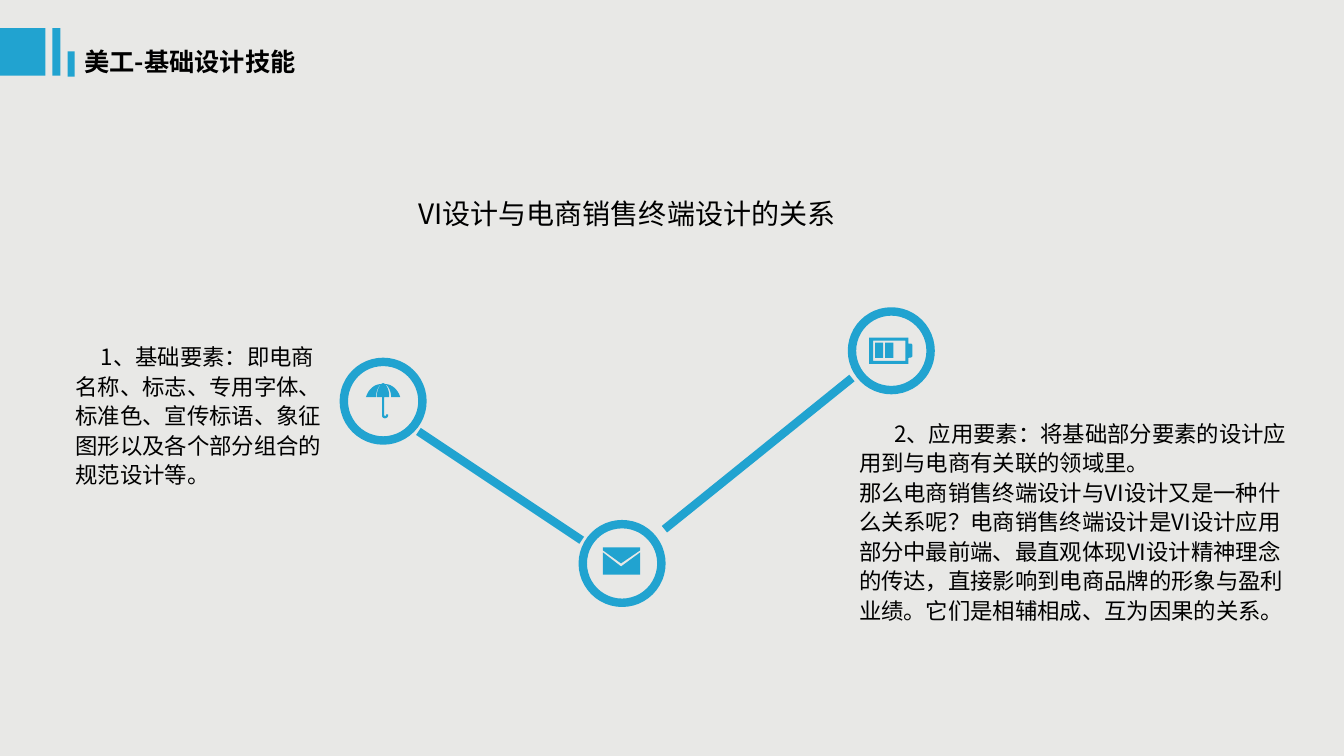
from dataclasses import dataclass

from lxml.etree import SubElement
from pptx import Presentation
from pptx.dml.color import RGBColor
from pptx.enum.shapes import MSO_CONNECTOR as Connector, MSO_SHAPE as Preset
from pptx.enum.text import MSO_AUTO_SIZE as AutoSize
from pptx.oxml.ns import qn
from pptx.util import Inches, Pt


@dataclass(frozen=True)
class Theme:
    font: str = "Noto Sans CJK SC"
    accent: RGBColor = RGBColor(0x21, 0xA3, 0xD0)
    ink: RGBColor = RGBColor(0, 0, 0)
    backdrop: RGBColor = RGBColor(0xE8, 0xE8, 0xE6)
    heading: int = 18
    subject: int = 20
    body: int = 16
    stroke: int = 6


def trace(segments, steps=8):
    points = [segments[0]]
    for segment in segments[1:]:
        if len(segment) == 2:
            points.append(segment)
            continue
        knots = (points[-1], *segment)
        for step in range(1, steps + 1):
            t = step / steps
            weights = ((1 - t) ** 3, 3 * t * (1 - t) ** 2, 3 * t * t * (1 - t), t ** 3)
            points.append(tuple(sum(w * knot[axis] for w, knot in zip(weights, knots))
                                for axis in (0, 1)))
    return [(Inches(x), Inches(y)) for x, y in points]


class SlideMaker:
    def __init__(self, page, theme):
        self.page = page
        self.theme = theme
        fill = page.background.fill
        fill.solid()
        fill.fore_color.rgb = theme.backdrop

    def paint(self, shape):
        shape.shadow.inherit = False
        shape.fill.solid()
        shape.fill.fore_color.rgb = self.theme.accent
        shape.line.fill.background()

    def stroke(self, line):
        line.color.rgb = self.theme.accent
        line.width = Pt(self.theme.stroke)

    def block(self, left, top, width, height):
        self.paint(self.page.shapes.add_shape(
            Preset.RECTANGLE, Inches(left), Inches(top), Inches(width), Inches(height)))

    def ring(self, left, top, size=0.78):
        ring = self.page.shapes.add_shape(
            Preset.OVAL, Inches(left), Inches(top), Inches(size), Inches(size))
        ring.shadow.inherit = False
        ring.fill.background()
        self.stroke(ring.line)

    def link(self, start, end):
        link = self.page.shapes.add_connector(
            Connector.STRAIGHT, *map(Inches, (*start, *end)))
        self.stroke(link.line)
        SubElement(link._element.spPr, qn("a:effectLst"))

    def outline(self, *contours):
        first, *others = [trace(contour) for contour in contours]
        builder = self.page.shapes.build_freeform(*first[0])
        builder.add_line_segments(first[1:])
        for contour in others:
            builder.move_to(*contour[0])
            builder.add_line_segments(contour[1:])
        self.paint(builder.convert_to_shape())

    def text(self, frame, paragraphs, size, bold=False, indent=0.0,
             spacing=1.0, insets=(0.1, 0.05)):
        box = self.page.shapes.add_textbox(*map(Inches, frame)).text_frame
        box.word_wrap = True
        box.auto_size = AutoSize.SHAPE_TO_FIT_TEXT
        box.margin_left = box.margin_right = Inches(insets[0])
        box.margin_top = box.margin_bottom = Inches(insets[1])
        box.text = "\n".join(paragraphs)
        for para in box.paragraphs:
            para.line_spacing = spacing
            font = para.font
            font.name = self.theme.font
            font.size = Pt(size)
            font.bold = bold
            font.color.rgb = self.theme.ink
            defaults = para._p.pPr.find(qn("a:defRPr"))
            SubElement(defaults, qn("a:ea")).set("typeface", self.theme.font)
        if indent:
            box.paragraphs[0]._p.pPr.set("indent", str(Inches(indent)))


UMBRELLA = (
    (3.88, 3.94), (3.97, 3.94),
    ((3.95, 3.87), (3.89, 3.81), (3.82, 3.81)), (3.8, 3.8), (3.78, 3.81),
    ((3.71, 3.81), (3.65, 3.87), (3.63, 3.94)), (3.73, 3.94),
    ((3.73, 3.86), (3.77, 3.81), (3.78, 3.81)),
    ((3.73, 3.87), (3.74, 3.94), (3.74, 3.94)), (3.79, 3.94), (3.79, 4.12),
    ((3.79, 4.14), (3.8, 4.15), (3.82, 4.15)),
    ((3.83, 4.15), (3.85, 4.14), (3.85, 4.12)),
    (3.85, 4.11), (3.83, 4.11), (3.83, 4.12), (3.82, 4.13), (3.81, 4.12),
    (3.81, 3.94), (3.86, 3.94),
    ((3.86, 3.94), (3.87, 3.87), (3.82, 3.81)),
    ((3.83, 3.81), (3.88, 3.86), (3.88, 3.94)),
)
ENVELOPE_BODY = ((5.98, 5.48), (5.98, 5.7), (6.35, 5.7), (6.35, 5.48), (6.16, 5.62))
ENVELOPE_FLAP = ((6.35, 5.46), (6.35, 5.43), (5.98, 5.43), (5.98, 5.46), (6.16, 5.59))
BATTERY_CASE = (
    (9.01, 3.41), (9.01, 3.35), (8.62, 3.35), (8.62, 3.61), (9.01, 3.61), (9.01, 3.55),
    ((9.02, 3.55), (9.05, 3.55), (9.05, 3.53)), (9.05, 3.43),
    ((9.05, 3.4), (9.02, 3.41), (9.01, 3.41)),
)
BATTERY_WINDOW = ((8.98, 3.58), (8.66, 3.58), (8.66, 3.38), (8.98, 3.38), (8.98, 3.58))

BASICS = ("1、基础要素：即电商名称、标志、专用字体、标准色、宣传标语、象征图形以及各个部分组合的规范设计等。",)
APPLICATIONS = (
    "2、应用要素：将基础部分要素的设计应用到与电商有关联的领域里。",
    "那么电商销售终端设计与VI设计又是一种什么关系呢？电商销售终端设计是VI设计应用部分中最前端、"
    "最直观体现VI设计精神理念的传达，直接影响到电商品牌的形象与盈利业绩。"
    "它们是相辅相成、互为因果的关系。",
)


def main():
    deck = Presentation()
    deck.slide_width, deck.slide_height = Inches(13.33), Inches(7.5)
    theme = Theme()
    maker = SlideMaker(deck.slides.add_slide(deck.slide_layouts[6]), theme)

    for left, top in ((3.41, 3.59), (5.78, 5.2), (8.45, 3.09)):
        maker.ring(left, top)
    maker.link((4.15, 4.28), (5.77, 5.36))
    maker.link((6.59, 5.25), (8.45, 3.75))

    body = dict(size=theme.body, spacing=1.1, insets=(0.07, 0.03))
    maker.text((0.68, 3.35, 2.66, 1.55), BASICS, indent=0.25, **body)
    maker.text((8.45, 4.11, 4.44, 2.14), APPLICATIONS, indent=0.35, **body)

    maker.outline(ENVELOPE_BODY)
    maker.outline(ENVELOPE_FLAP)
    maker.outline(UMBRELLA)
    maker.outline(BATTERY_CASE, BATTERY_WINDOW)
    for left in (8.68, 8.78):
        maker.block(left, 3.4, 0.08, 0.15)

    maker.text((4.05, 1.9, 4.5, 0.44), ("VI设计与电商销售终端设计的关系",), theme.subject)
    for bar in ((0, 0.28, 0.45, 0.47), (0.52, 0.28, 0.08, 0.47), (0.67, 0.51, 0.07, 0.25)):
        maker.block(*bar)
    maker.text((0.74, 0.41, 2.71, 0.4), ("美工-基础设计技能",), theme.heading, bold=True)

    deck.save("out.pptx")


if __name__ == "__main__":
    main()
